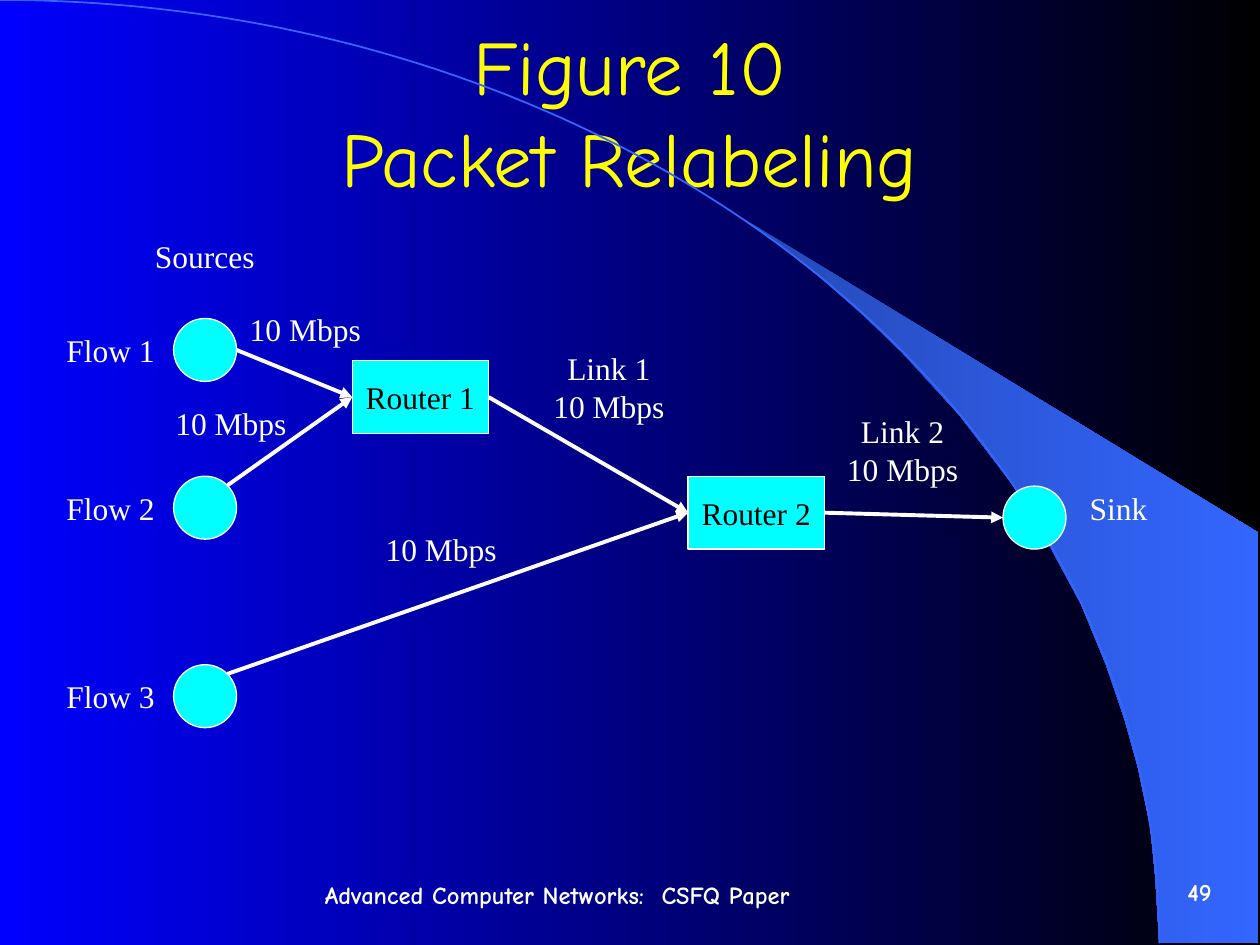
import math
from lxml import etree
from pptx import Presentation
from pptx import util as u
from pptx.dml.color import RGBColor
from pptx.enum import shapes, text
from pptx.oxml.ns import qn

HUES = {"blue": "0000FF", "black": "000000", "white": "FFFFFF", "cyan": "00FFFF",
        "yellow": "FFFF00", "arc": "3366FF", "dusk": "2449B6"}
SERIF, COMIC = "Times New Roman", "Comic Neue"
MID, LEFT, RIGHT = text.PP_ALIGN.CENTER, text.PP_ALIGN.LEFT, text.PP_ALIGN.RIGHT
DOT = 1.27
BOX = (2.75, 1.47)


def hue(name):
    return RGBColor.from_string(HUES[name])


class Deck:
    def __init__(self):
        self.prs = Presentation()
        self.prs.slide_width, self.prs.slide_height = u.Cm(25.4), u.Cm(19.05)
        self.slide = self.prs.slides.add_slide(self.prs.slide_layouts[5])
        self.shapes = self.slide.shapes

    def blend(self, fill, start, end):
        fill.gradient()
        fill.gradient_angle = 0
        for stop, name in zip(fill.gradient_stops, (start, end)):
            stop.color.rgb = hue(name)

    def letter(self, shape, lines, size=18, font=SERIF, color="white",
               align=MID, bold=False, wrap=False):
        frame = shape.text_frame
        frame.word_wrap = wrap
        frame.auto_size = text.MSO_AUTO_SIZE.NONE
        frame.vertical_anchor = text.MSO_ANCHOR.MIDDLE
        for i, line in enumerate(lines):
            para = frame.add_paragraph() if i else frame.paragraphs[0]
            para.alignment = align
            for j, part in enumerate(line.split("\n")):
                if j:
                    para.add_line_break()
                run = para.add_run()
                run.text = part
                run.font.size, run.font.name = u.Pt(size), font
                run.font.bold = bold
                run.font.color.rgb = hue(color)

    def title(self, line, x, y, w, h):
        shape = self.shapes.title
        shape.left, shape.top, shape.width, shape.height = map(u.Cm, (x, y, w, h))
        self.letter(shape, [line], 44, COMIC, "yellow", wrap=True)

    def label(self, lines, x, y, w=2.54, h=DOT, **style):
        self.letter(self.shapes.add_textbox(*map(u.Cm, (x, y, w, h))), lines, **style)

    def node(self, kind, x, y, w, h):
        shape = self.shapes.add_shape(kind, *map(u.Cm, (x, y, w, h)))
        shape.shadow.inherit = False
        shape.fill.solid()
        shape.fill.fore_color.rgb = hue("cyan")
        shape.line.color.rgb = hue("white")
        shape.line.width = u.Pt(0.75)
        return shape

    def circle(self, x, y):
        self.node(shapes.MSO_SHAPE.OVAL, x, y, DOT, DOT)

    def router(self, name, x, y):
        shape = self.node(shapes.MSO_SHAPE.RECTANGLE, x, y, *BOX)
        self.letter(shape, [name], color="black")
        return shape

    def arrow(self, start, end):
        points = [p if isinstance(p, tuple) else (0, 0) for p in (start, end)]
        line = self.shapes.add_connector(
            shapes.MSO_CONNECTOR.STRAIGHT, *(u.Cm(v) for p in points for v in p))
        if not isinstance(start, tuple):
            line.begin_connect(start, 3)
        if not isinstance(end, tuple):
            line.end_connect(end, 1)
        line.line.color.rgb = hue("white")
        line.line.width = u.Pt(2.25)
        props = line._element.spPr
        etree.SubElement(props.find(qn("a:ln")), qn("a:tailEnd"), type="triangle")
        etree.SubElement(props, qn("a:effectLst"))

    def outline(self, points, close):
        spots = [(u.Cm(x), u.Cm(y)) for x, y in points]
        pen = self.shapes.build_freeform(*spots[0])
        pen.add_line_segments(spots[1:], close=close)
        shape = pen.convert_to_shape()
        shape.shadow.inherit = False
        return shape

    def beam(self, points):
        shape = self.outline(points, True)
        self.blend(shape.fill, "dusk", "arc")
        shape.line.fill.background()

    def curve(self, w, h, steps=90):
        turns = [math.pi / 2 * i / steps for i in range(steps + 1)]
        shape = self.outline([(w * math.sin(t), h * (1 - math.cos(t))) for t in turns], False)
        shape.fill.background()
        shape.line.color.rgb = hue("arc")
        shape.line.width = u.Pt(1)


def main():
    deck = Deck()
    deck.blend(deck.slide.background.fill, "blue", "black")
    deck.beam([(23.37, 19), (25.37, 19.02), (25.37, 10.74), (14.96, 4.39),
               (15.85, 5.05), (16.59, 5.64), (17.4, 6.35), (18.19, 7.11),
               (19.35, 8.38), (20.4, 9.75), (21.13, 10.95), (21.79, 12.17),
               (22.3, 13.41), (22.68, 14.53), (22.94, 15.47), (23.19, 16.66),
               (23.29, 17.68)])
    deck.curve(23.37, 19.02)
    deck.title("Figure 10\nPacket Relabeling", 1.9, 0.64, 21.59, 3.18)

    left, tops = 3.5, (6.42, 9.6, 13.4)
    sink = (20.22, 9.8)
    for i, top in enumerate(tops, 1):
        deck.circle(left, top)
        deck.label([f"Flow {i}"], left - 2.54, top)
    deck.circle(*sink)
    one = deck.router("Router 1", 7.1, 7.27)
    two = deck.router("Router 2", 13.87, 9.6)

    half = DOT / 2
    slant = half * math.sqrt(0.5)
    deck.arrow((left + DOT, tops[0] + half), one)
    for top, goal in zip(tops[1:], (one, two)):
        deck.arrow((left + half + slant, top + half - slant), goal)
    deck.arrow(one, two)
    deck.arrow(two, (sink[0], sink[1] + half))

    deck.label(["Sources"], 2.86, 4.52)
    deck.label(["Sink"], 21.28, 9.6)
    rate = "10 Mbps"
    for x, y in ((4.78, 6), (3.28, 7.9), (7.52, 10.44)):
        deck.label([rate], x, y, BOX[0])
    for i, (x, y) in enumerate(((10.9, 7.06), (16.82, 8.33)), 1):
        deck.label([f"Link {i}", rate], x, y, *BOX)

    foot = {"size": 14, "font": COMIC, "bold": True, "wrap": True}
    deck.label(["Advanced Computer Networks:  CSFQ Paper"], 6.3, 17.53, 12.4, 1,
               align=LEFT, **foot)
    deck.label(["49"], 20.9, 17.33, 3.78, 1.3, align=RIGHT, **foot)
    deck.prs.save("out.pptx")


if __name__ == "__main__":
    main()
